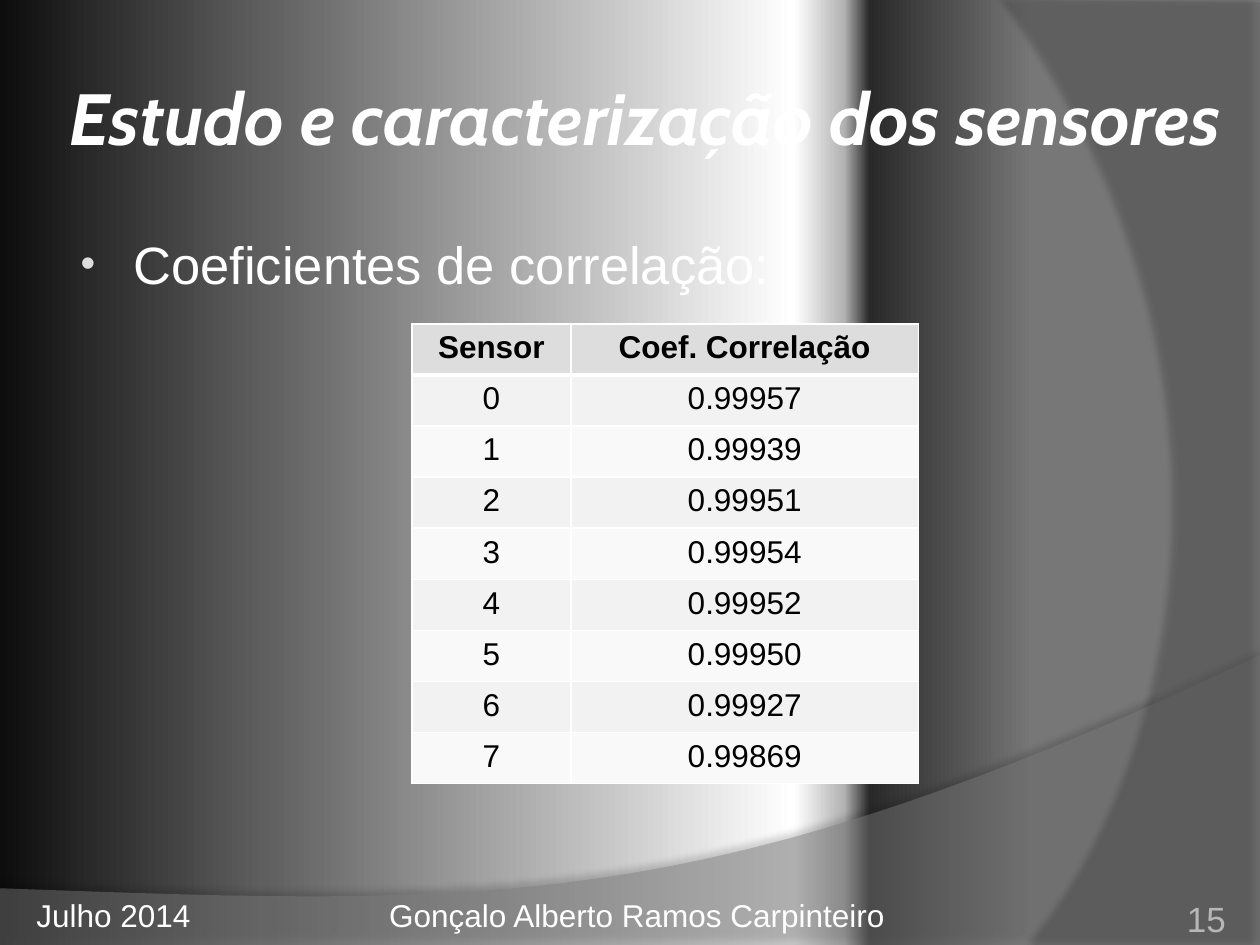
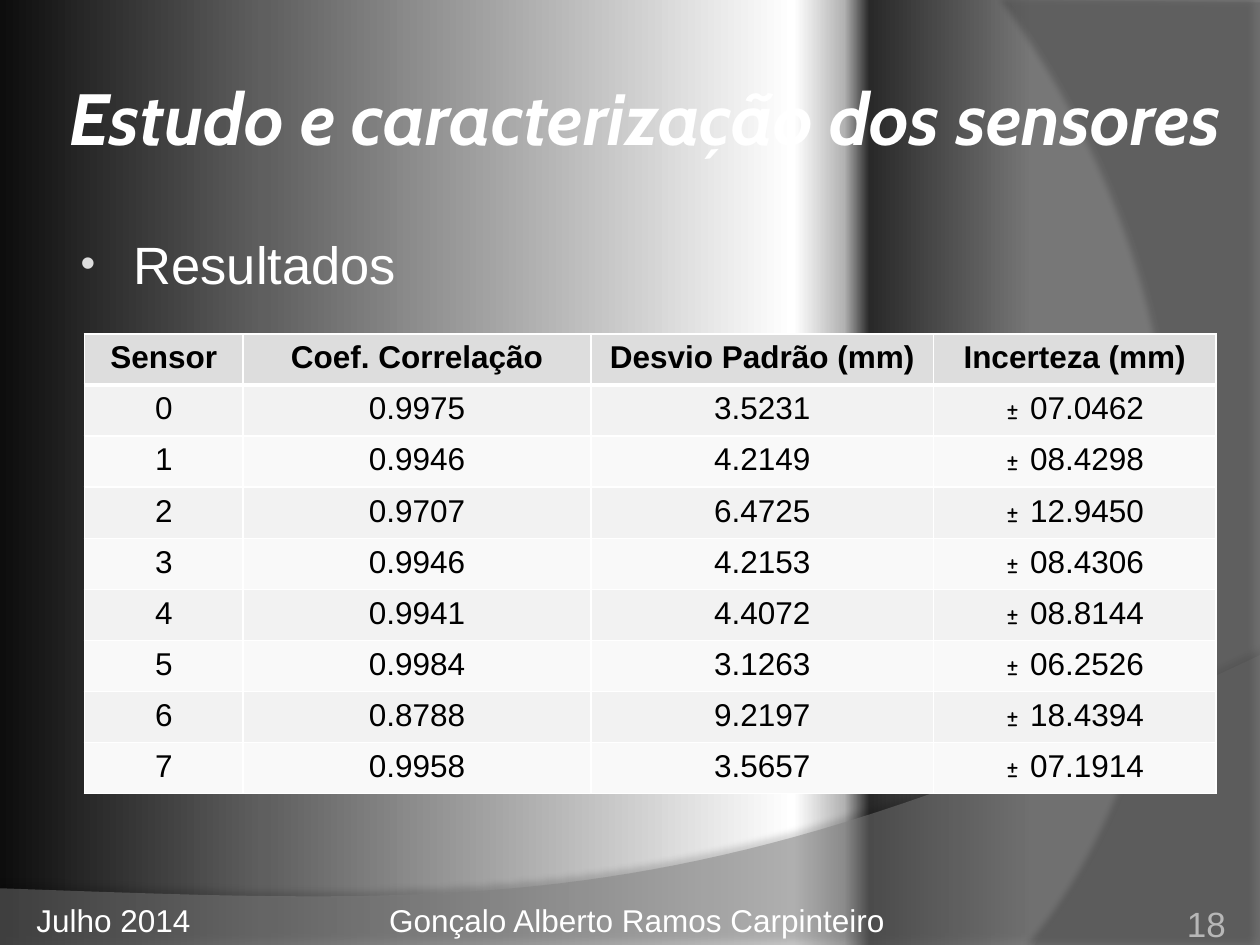
from lxml.etree import SubElement
from pptx import Presentation
from pptx.dml.color import RGBColor
from pptx.enum.text import MSO_ANCHOR as Anchor, MSO_AUTO_SIZE as AutoSize, PP_ALIGN as Align
from pptx.oxml.ns import qn
from pptx.util import Inches, Pt

COLORS = {
    "white": "FFFFFF", "black": "000000", "bullet": "DDDDDD", "page_number": "B7B7B7",
    "header": "DDDDDD", "odd_row": "F2F2F2", "even_row": "F9F9F9",
    "lower_band": "7F7F7F", "right_band": "5E5E5E",
}
BACKGROUND_STOPS = [(0, "0D0D0D"), (21, "5F5F5F"), (63, "FFFFFF"),
                    (67, "B2B2B2"), (69, "292929"), (82, "777777")]
TITLE = "Estudo e caracterização dos sensores"
AUTHOR = "Gonçalo Alberto Ramos Carpinteiro"
DATE = "Julho 2014"
ROW_HEIGHT = 3.65 / 9
COLUMN_WIDTHS = [1.26, 2.76, 2.72, 2.24]

TITLE_FONT = {"name": "Cabin", "size": Pt(41.4), "bold": True, "italic": True}
BODY_FONT = {"name": "Arial", "size": Pt(30)}
TEXT_FONT = {"name": "Arial", "size": Pt(18)}
NUMBER_FONT = {"name": "Arial", "size": Pt(20)}
HEADER_FONT = {**TEXT_FONT, "bold": True}
CELL_FONT = {**TEXT_FONT, "bold": False}
SIGN_FONT = {**CELL_FONT, "name": "Comic Neue"}

CORRELATIONS = ["0.99957", "0.99939", "0.99951", "0.99954",
                "0.99952", "0.99950", "0.99927", "0.99869"]
RESULTS = [
    ("0.9975", "3.5231", "± 07.0462"), ("0.9946", "4.2149", "± 08.4298"),
    ("0.9707", "6.4725", "± 12.9450"), ("0.9946", "4.2153", "± 08.4306"),
    ("0.9941", "4.4072", "± 08.8144"), ("0.9984", "3.1263", "± 06.2526"),
    ("0.8788", "9.2197", "± 18.4394"), ("0.9958", "3.5657", "± 07.1914"),
]


def rgb(name):
    """Return the palette colour with this name."""
    return RGBColor.from_string(COLORS[name])


def add_element(parent, tag, **attributes):
    """Append a drawing element with attributes."""
    return SubElement(parent, qn(tag), {key: str(value) for key, value in attributes.items()})


def apply(target, values):
    """Set attributes from a dict of format values."""
    for name, value in values.items():
        setattr(target, name, value)


def format_font(font, values, color):
    """Apply font values and a palette colour."""
    apply(font, values)
    font.color.rgb = rgb(color)


def place(shape, left, top, width, height):
    """Move and size a shape in inches."""
    apply(shape, {"left": Inches(left), "top": Inches(top),
                  "width": Inches(width), "height": Inches(height)})


def set_background(master):
    """Give the master its horizontal metallic gradient."""
    fill = master.background.fill
    fill.gradient()
    fill.gradient_angle = 0
    stops = master.element.find(".//" + qn("p:bg")).find(".//" + qn("a:gsLst"))
    for stop in list(stops):
        stops.remove(stop)
    for position, color in BACKGROUND_STOPS:
        stop = add_element(stops, "a:gs", pos=position * 1000)
        add_element(stop, "a:srgbClr", val=color)


def curve_points(start, first, second, end, steps=48):
    """Return points along a cubic Bezier curve."""
    points = []
    for step in range(steps + 1):
        t = step / steps
        weights = ((1 - t) ** 3, 3 * t * (1 - t) ** 2, 3 * t * t * (1 - t), t ** 3)
        points.append(tuple(sum(weight * point[axis] for weight, point
                                in zip(weights, (start, first, second, end)))
                            for axis in (0, 1)))
    return points


def add_band(slide, master, points, color, opacity, shadow):
    """Draw a translucent curved band and place it on the master."""
    points = [(Inches(x), Inches(y)) for x, y in points]
    builder = slide.shapes.build_freeform(*points[0], scale=1.0)
    builder.add_line_segments(points[1:], close=True)
    band = builder.convert_to_shape()
    band.fill.solid()
    band.fill.fore_color.rgb = rgb(color)
    fill_color = band.element.spPr.find(".//" + qn("a:srgbClr"))
    add_element(fill_color, "a:alpha", val=opacity * 1000)
    band.line.fill.background()
    band.shadow.inherit = False
    shadow_opacity, distance, angle = shadow
    effects = band.element.spPr.find(qn("a:effectLst"))
    outer = add_element(effects, "a:outerShdw", blurRad=Pt(4), dist=Pt(distance),
                        dir=angle * 60000, algn="ctr", rotWithShape=0)
    shadow_color = add_element(outer, "a:srgbClr", val=COLORS["black"])
    add_element(shadow_color, "a:alpha", val=shadow_opacity * 1000)
    band.element.nvSpPr.cNvPr.set("id", str(len(master.shapes) + 20))
    master.shapes.element.append(band.element)


def add_bands(slide, master):
    """Add the two bands that all slides share."""
    lower_curve = curve_points((10, 5.2), (5.59, 7.29), (3.91, 7.19), (0, 7.05))
    right_curve = curve_points((8.21, 7.5), (9.35, 6.19), (10.18, 3), (8, 0))
    add_band(slide, master, [(0, 7.5), (10, 7.5)] + lower_curve, "lower_band", 45, (35, 3.5, 270))
    add_band(slide, master, [(10, 0.02), (10, 7.5)] + right_curve, "right_band", 40, (45, 4, 180))


def fill_title(slide):
    """Fill and format the title placeholder."""
    title = slide.shapes.title
    place(title, 0.5, 0.3, 9.5, 1.25)
    frame = title.text_frame
    frame.text = TITLE
    margins = {f"margin_{side}": Inches(0.05) for side in ("left", "top", "right", "bottom")}
    apply(frame, {"auto_size": AutoSize.NONE, "vertical_anchor": Anchor.MIDDLE, **margins})
    frame.paragraphs[0].alignment = Align.LEFT
    format_font(frame.paragraphs[0].runs[0].font, TITLE_FONT, "white")


def fill_body(slide, text, width, height):
    """Fill the body placeholder with one bulleted line."""
    body = slide.placeholders[1]
    place(body, 0.5, 1.75, width, height)
    frame = body.text_frame
    frame.text = text
    apply(frame, {"auto_size": AutoSize.NONE, "margin_top": Inches(0.09)})
    paragraph = frame.paragraphs[0]
    apply(paragraph, {"space_before": Pt(0), "alignment": Align.LEFT})
    properties = paragraph._p.get_or_add_pPr()
    properties.set("marL", str(Inches(0.46)))
    properties.set("indent", str(Inches(-0.42)))
    add_element(add_element(properties, "a:buClr"), "a:srgbClr", val=COLORS["bullet"])
    add_element(properties, "a:buSzPct", val=80000)
    add_element(properties, "a:buFont", typeface="Arial")
    add_element(properties, "a:buChar", char="•")
    format_font(paragraph.runs[0].font, BODY_FONT, "white")


def add_text(slide, text, box, font, color, alignment, **frame_values):
    """Add a one-line text box."""
    frame = slide.shapes.add_textbox(*map(Inches, box)).text_frame
    apply(frame, {"word_wrap": True, **frame_values})
    paragraph = frame.paragraphs[0]
    paragraph.alignment = alignment
    run = paragraph.add_run()
    run.text = text
    format_font(run.font, font, color)


def add_footer(slide, number, top):
    """Add author, page number and date."""
    add_text(slide, AUTHOR, (2.99, top, 4.69, 0.4), TEXT_FONT, "white", Align.LEFT)
    add_text(slide, number, (7.17, top, 2.56, 0.4), NUMBER_FONT, "page_number", Align.RIGHT,
             vertical_anchor=Anchor.BOTTOM, margin_left=0, margin_top=0,
             margin_right=0, margin_bottom=0)
    add_text(slide, DATE, (0, top, 1.61, 0.4), TEXT_FONT, "white", Align.RIGHT)


def fill_cell(cell, text, row):
    """Write, border and fill one table cell."""
    properties = cell._tc.get_or_add_tcPr()
    widths = {"L": 1, "R": 1, "T": 3 if row == 1 else 1, "B": 3 if row == 0 else 1}
    for side, width in widths.items():
        line = add_element(properties, f"a:ln{side}", w=Pt(width))
        add_element(add_element(line, "a:solidFill"), "a:srgbClr", val=COLORS["white"])
    cell.fill.solid()
    color = "header" if row == 0 else "odd_row" if row % 2 else "even_row"
    cell.fill.fore_color.rgb = rgb(color)
    paragraph = cell.text_frame.paragraphs[0]
    paragraph.alignment = Align.CENTER
    parts = ["± ", text[2:]] if text.startswith("± ") else [text]
    for part in parts:
        run = paragraph.add_run()
        run.text = part
        font = HEADER_FONT if row == 0 else SIGN_FONT if part == "± " else CELL_FONT
        format_font(run.font, font, "black")


def add_sensor_table(slide, left, top, headers, records):
    """Add a table with one row for each sensor."""
    rows = [headers] + [(str(sensor), *record) for sensor, record in enumerate(records)]
    widths = COLUMN_WIDTHS[:len(headers)]
    table = slide.shapes.add_table(len(rows), len(headers), Inches(left), Inches(top),
                                   Inches(sum(widths)), Inches(ROW_HEIGHT * len(rows))).table
    for column, width in zip(table.columns, widths):
        column.width = Inches(width)
    for row, values in enumerate(rows):
        table.rows[row].height = Inches(ROW_HEIGHT)
        for column, text in enumerate(values):
            fill_cell(table.cell(row, column), text, row)


def main():
    """Build the two sensor slides."""
    presentation = Presentation()
    presentation.slide_width, presentation.slide_height = Inches(10), Inches(7.5)
    master = presentation.slide_master
    layout = presentation.slide_layouts[1]
    set_background(master)

    correlation = presentation.slides.add_slide(layout)
    add_bands(correlation, master)
    fill_title(correlation)
    fill_body(correlation, "Coeficientes de correlação:", 8.17, 4.95)
    add_sensor_table(correlation, 3.27, 2.57, ("Sensor", "Coef. Correlação"),
                     [(value,) for value in CORRELATIONS])
    add_footer(correlation, "15", 7.06)

    results = presentation.slides.add_slide(layout)
    fill_title(results)
    fill_body(results, "Resultados", 3.87, 0.74)
    add_footer(results, "18", 7.1)
    add_sensor_table(results, 0.67, 2.65, ("Sensor", "Coef. Correlação", "Desvio Padrão (mm)",
                                           "Incerteza (mm)"), RESULTS)
    presentation.save("out.pptx")


if __name__ == "__main__":
    main()
